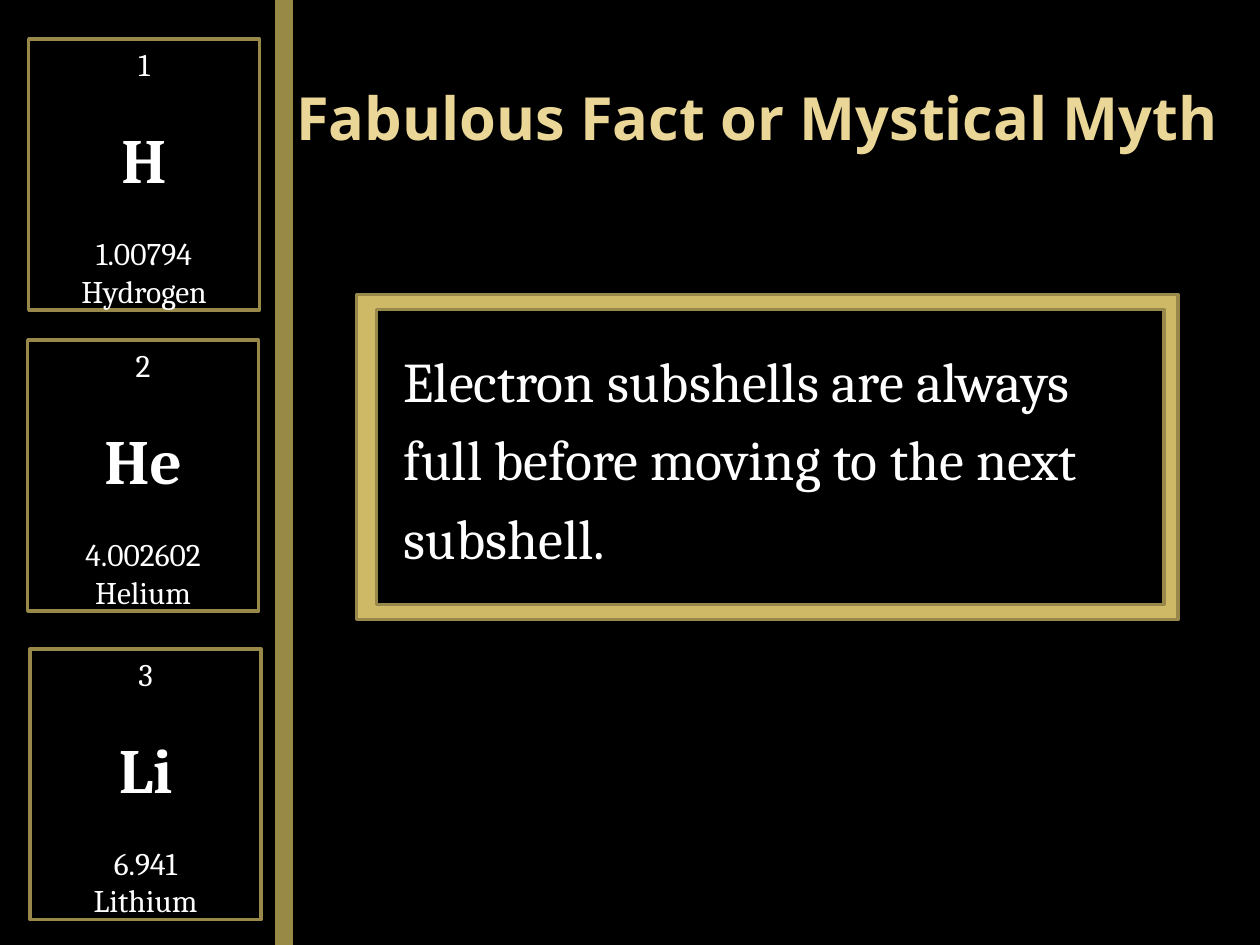
import pptx
import pptx.dml.color
import pptx.enum.shapes
import pptx.enum.text
import pptx.oxml.ns
import pptx.util
from lxml import etree

Cm, Pt = pptx.util.Cm, pptx.util.Pt
RGBColor = pptx.dml.color.RGBColor
ALIGN = pptx.enum.text.PP_ALIGN
ANCHOR = pptx.enum.text.MSO_ANCHOR

BLACK = RGBColor(0x00, 0x00, 0x00)
WHITE = RGBColor(0xFF, 0xFF, 0xFF)
GOLD = RGBColor(0xCE, 0xB9, 0x66)
DARK_GOLD = RGBColor(0x98, 0x89, 0x4B)
DIVIDER_GOLD = RGBColor(0x99, 0x89, 0x46)
PALE_GOLD = RGBColor(0xEA, 0xD6, 0x96)

SLIDE_WIDTH, SLIDE_HEIGHT = Cm(25.4), Cm(19.05)
CARD_WIDTH, CARD_HEIGHT = Cm(4.65), Cm(5.46)

# left, top, (number, symbol, mass, name)
ELEMENTS = [
    (Cm(0.58), Cm(0.79), ("1", "H", "1.00794", "Hydrogen")),
    (Cm(0.56), Cm(6.86), ("2", "He", "4.002602", "Helium")),
    (Cm(0.61), Cm(13.08), ("3", "Li", "6.941", "Lithium")),
]
STATEMENT = [
    "Electron subshells are always",
    "full before moving to the next",
    "subshell.",
]


def add_frame(page, left, top, width, height, fill):
    frame = page.shapes.add_shape(
        pptx.enum.shapes.MSO_SHAPE.RECTANGLE, left, top, width, height)
    frame.shadow.inherit = False
    frame.fill.solid()
    frame.fill.fore_color.rgb = fill
    frame.line.color.rgb = DARK_GOLD
    frame.line.width = Pt(2)
    return frame


def write_lines(text_frame, lines, size, align, color=WHITE, font="Cambria"):
    """Write one paragraph per line and return the paragraphs."""
    text_frame.word_wrap = True
    text_frame.text = "\n".join(lines)
    for para in text_frame.paragraphs:
        para.alignment = align
        para.font.name = font
        para.font.size = Pt(size)
        para.font.color.rgb = color
    return text_frame.paragraphs


def add_title(page, left, top, width, height):
    box = page.shapes.add_textbox(left, top, width, height)
    box.text_frame.vertical_anchor = ANCHOR.MIDDLE
    para, = write_lines(box.text_frame, ["Fabulous Fact or Mystical Myth"],
                        34, ALIGN.LEFT, PALE_GOLD, "Open Sans")
    para.font.bold = True


def add_element_card(page, left, top, lines):
    card = add_frame(page, left, top, CARD_WIDTH, CARD_HEIGHT, BLACK)
    card.text_frame.vertical_anchor = ANCHOR.TOP
    number, symbol, mass, name = write_lines(
        card.text_frame, lines, 18, ALIGN.CENTER)
    symbol.font.size = Pt(36)
    symbol.font.bold = True
    symbol.space_before = symbol.space_after = Pt(21.5)


def add_divider(page, x):
    divider = page.shapes.add_connector(
        pptx.enum.shapes.MSO_CONNECTOR.STRAIGHT, x, 0, x, SLIDE_HEIGHT)
    divider.line.color.rgb = DIVIDER_GOLD
    divider.line.width = Pt(10)
    etree.SubElement(divider._element.spPr, pptx.oxml.ns.qn("a:effectLst"))


def add_statement(page, left, top, width, height):
    # Gold surround with a black panel inside
    add_frame(page, left, top, width, height, GOLD)
    side, edge = Cm(0.4), Cm(0.3)
    add_frame(page, left + side, top + edge,
              Cm(15.88), height - 2 * edge, BLACK)

    # Statement text
    box = page.shapes.add_textbox(left + Cm(0.7), top + Cm(0.92),
                                  width - Cm(1.4), height - Cm(1.5))
    for para in write_lines(box.text_frame, STATEMENT, 32, ALIGN.LEFT):
        para.space_after = Pt(6.4)


def main():
    deck = pptx.Presentation()
    deck.slide_width, deck.slide_height = SLIDE_WIDTH, SLIDE_HEIGHT
    page = deck.slides.add_slide(deck.slide_layouts[6])
    page.background.fill.solid()
    page.background.fill.fore_color.rgb = BLACK

    add_title(page, Cm(5.72), Cm(0.76), Cm(19.68), Cm(3.18))
    add_statement(page, Cm(7.19), Cm(5.94), Cm(16.56), Cm(6.55))
    for left, top, lines in ELEMENTS:
        add_element_card(page, left, top, lines)
    add_divider(page, Cm(5.72))

    deck.save("out.pptx")


if __name__ == "__main__":
    main()
